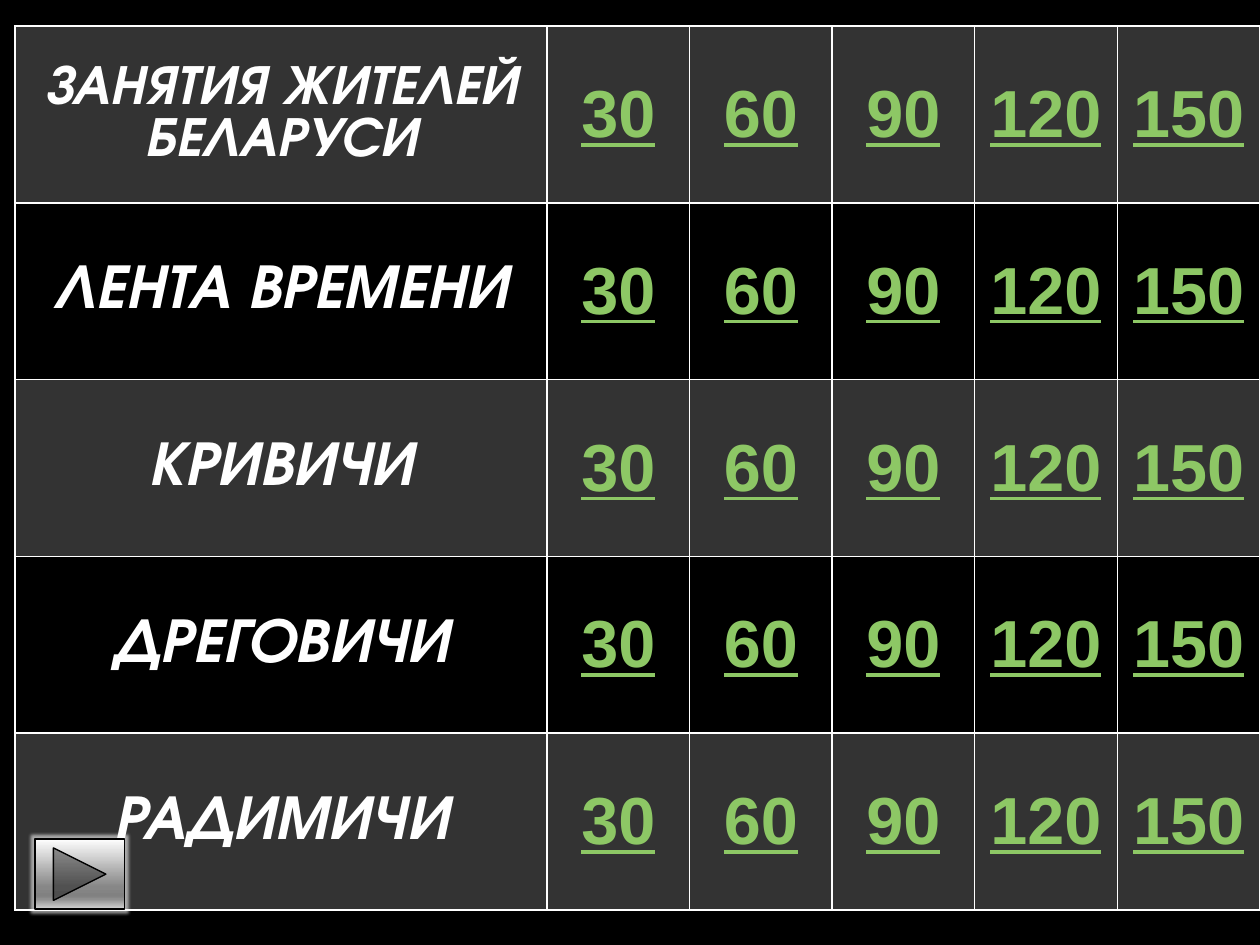
from dataclasses import dataclass

from lxml.etree import SubElement
from pptx import Presentation
from pptx.dml.color import RGBColor
from pptx.enum.shapes import MSO_SHAPE
from pptx.enum.text import MSO_ANCHOR, PP_ALIGN
from pptx.oxml.ns import qn
from pptx.util import Pt


@dataclass(frozen=True)
class Theme:
    back: str = "000000"
    white: str = "FFFFFF"
    green: str = "8DC765"
    head: str = "TeX Gyre Adventor"
    body: str = "Arial"
    long: int = 32
    short: int = 36
    score: int = 38
    steel: tuple = ((0, "FEFEFE"), (68, "878787"), (81, "818181"),
                    (86, "909090"), (100, "D3D3D3"))


THEME = Theme()
TOPICS = [
    ("ЗАНЯТИЯ ЖИТЕЛЕЙ БЕЛАРУСИ", THEME.long),
    ("ЛЕНТА ВРЕМЕНИ", THEME.short),
    ("КРИВИЧИ", THEME.short),
    ("ДРЕГОВИЧИ", THEME.short),
    ("РАДИМИЧИ", THEME.short),
]
SCORES = range(30, 151, 30)


def add_tint(parent, color, alpha=None):
    tint = SubElement(parent, qn("a:srgbClr"), val=color)
    if alpha is not None:
        SubElement(tint, qn("a:alpha"), val=str(alpha * 1000))


def add_edges(cell):
    props = cell._tc.get_or_add_tcPr()
    for side in ("lnL", "lnR", "lnT", "lnB"):
        line = SubElement(props, qn(f"a:{side}"), w=str(Pt(1)))
        add_tint(SubElement(line, qn("a:solidFill")), THEME.white)


def shade(cell, lit):
    if lit:
        fill = SubElement(cell._tc.get_or_add_tcPr(), qn("a:solidFill"))
        add_tint(fill, THEME.white, 20)
    else:
        cell.fill.background()


def write(cell, text, face, size, color):
    cell.vertical_anchor = MSO_ANCHOR.MIDDLE
    cell.text = text
    para = cell.text_frame.paragraphs[0]
    para.alignment = PP_ALIGN.CENTER
    font = para.font
    font.name, font.size, font.bold = face, Pt(size), True
    font.color.rgb = RGBColor.from_string(color)
    return font


def add_board(slide):
    frame = slide.shapes.add_table(
        len(TOPICS), len(SCORES) + 1, Pt(8.6), Pt(15), Pt(711.4), Pt(505))
    table = frame.table
    for col, width in zip(table.columns, [304] + [81.48] * len(SCORES)):
        col.width = Pt(width)
    for row, (topic, size) in enumerate(TOPICS):
        for col in range(len(table.columns)):
            cell = table.cell(row, col)
            add_edges(cell)
            shade(cell, row % 2 == 0)
        font = write(table.cell(row, 0), topic, THEME.head, size, THEME.white)
        font.italic = True
        for col, score in enumerate(SCORES, 1):
            font = write(table.cell(row, col), str(score), THEME.body,
                         THEME.score, THEME.green)
            font.underline = True


def add_button(slide):
    button = slide.shapes.add_shape(
        MSO_SHAPE.ACTION_BUTTON_FORWARD_OR_NEXT,
        Pt(20), Pt(479.5), Pt(51), Pt(40))
    button.line.color.rgb = RGBColor.from_string(THEME.back)
    button.line.width = Pt(0.75)
    button.fill.gradient()
    button.fill.gradient_angle = 270
    props = button._element.spPr
    stops = props.find(qn("a:gradFill")).find(qn("a:gsLst"))
    stops.clear()
    for place, color in THEME.steel:
        add_tint(SubElement(stops, qn("a:gs"), pos=str(place * 1000)), color)
    button.shadow.inherit = False
    glow = SubElement(props.find(qn("a:effectLst")), qn("a:glow"),
                      rad=str(Pt(4)))
    add_tint(glow, THEME.white, 60)


def main():
    deck = Presentation()
    deck.slide_width, deck.slide_height = Pt(720), Pt(540)
    slide = deck.slides.add_slide(deck.slide_layouts[6])
    slide.background.fill.solid()
    slide.background.fill.fore_color.rgb = RGBColor.from_string(THEME.back)
    add_board(slide)
    add_button(slide)
    deck.save("out.pptx")


if __name__ == "__main__":
    main()
